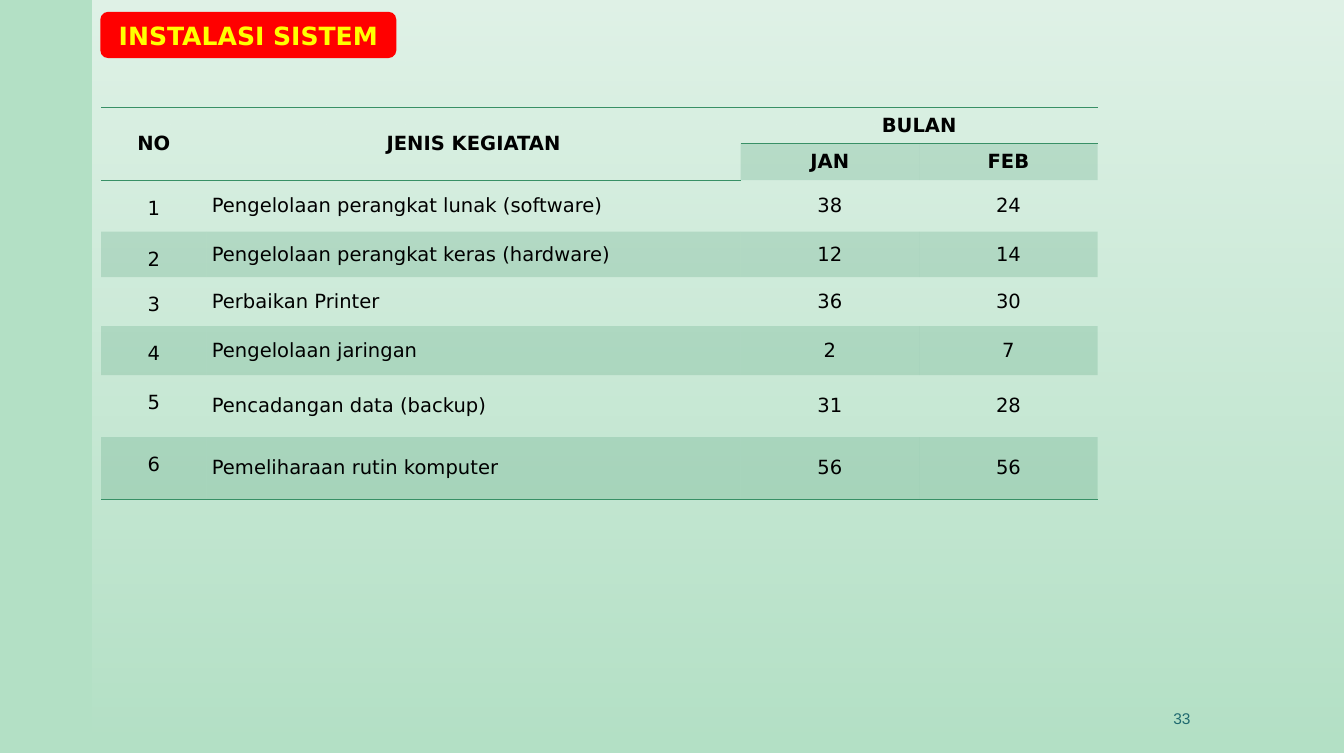
from lxml.etree import SubElement
from pptx import Presentation
from pptx.dml.color import RGBColor
from pptx.enum.shapes import MSO_SHAPE
from pptx.enum.text import MSO_ANCHOR, MSO_AUTO_SIZE, PP_ALIGN
from pptx.oxml import parse_xml
from pptx.oxml.ns import nsdecls, qn
from pptx.util import Cm, Pt

COLORS = {
    "background": "B3E0C5",
    "panel": "FFFFFF",
    "band": "389066",
    "badge": "FF0000",
    "badge_text": "FFFF00",
    "text": "000000",
    "number": "1F696F",
}
FONT = "DejaVu Sans"
NO_TABLE_STYLE = "{2D5ABB26-0587-4C30-8999-92F81FD0307C}"
BADGE_BOX = (Cm(2.54), Cm(0.3), Cm(7.49), Cm(1.17))
COLUMN_WIDTHS = [2.67, 13.51, 4.52, 4.52]
ROW_HEIGHTS = [0.92, 0.92, 1.3, 1.07, 1.24, 1.24, 1.57, 1.57]
HEADER = [
    ("NO", "JENIS KEGIATAN", "BULAN", ""),
    ("", "", "JAN", "FEB"),
]
ACTIVITIES = [
    ("Pengelolaan perangkat lunak (software)", 38, 24),
    ("Pengelolaan perangkat keras (hardware)", 12, 14),
    ("Perbaikan Printer", 36, 30),
    ("Pengelolaan jaringan", 2, 7),
    ("Pencadangan data (backup)", 31, 28),
    ("Pemeliharaan rutin komputer", 56, 56),
]


def color(name):
    return RGBColor.from_string(COLORS[name])


def set_alphas(element, percentages):
    for node, percentage in zip(element.iter(qn("a:srgbClr")), percentages):
        SubElement(node, qn("a:alpha")).set("val", str(percentage * 1000))


def format_text(text_frame, size, color_name, font=FONT, bold=False, align=PP_ALIGN.CENTER):
    for paragraph in text_frame.paragraphs:
        paragraph.alignment = align
        for run in paragraph.runs:
            run.font.name = font
            run.font.size = Pt(size)
            run.font.bold = bold
            run.font.color.rgb = color(color_name)


def add_plain_shape(slide, kind, box):
    shape = slide.shapes.add_shape(kind, *box)
    shape.shadow.inherit = False
    shape.line.fill.background()
    return shape


def add_panel(slide):
    panel = add_plain_shape(slide, MSO_SHAPE.RECTANGLE, (Cm(2.34), 0, Cm(31.67), Cm(19.05)))
    panel.fill.gradient()
    panel.fill.gradient_angle = 270
    for stop, position in zip(panel.fill.gradient_stops, (0, 1)):
        stop.color.rgb = color("panel")
        stop.position = position
    set_alphas(panel.element.spPr, (60, 0))


def add_page_number(slide, text):
    box = slide.shapes.add_textbox(Cm(22.46), Cm(17.66), Cm(7.92), Cm(1.02))
    text_frame = box.text_frame
    text_frame.word_wrap = True
    text_frame.vertical_anchor = MSO_ANCHOR.MIDDLE
    text_frame.text = text
    format_text(text_frame, 11.1, "number", font="Arial", align=PP_ALIGN.RIGHT)


def set_borders(cell, sides):
    properties = cell._tc.get_or_add_tcPr()
    for index, side in enumerate(sides):
        properties.insert(index, parse_xml(
            f'<a:ln{side} {nsdecls("a")} w="12700"><a:solidFill>'
            f'<a:srgbClr val="{COLORS["band"]}"/></a:solidFill></a:ln{side}>'
        ))


def fill_cell(cell, banded):
    if banded:
        cell.fill.solid()
        cell.fill.fore_color.rgb = color("band")
        set_alphas(cell._tc.tcPr, [20])
    else:
        cell.fill.background()


def format_cell(cell, text, row, column):
    is_header = row < len(HEADER)
    cell.margin_left = cell.margin_right = Cm(0.13)
    cell.margin_top = cell.margin_bottom = Cm(0.13)
    cell.vertical_anchor = MSO_ANCHOR.MIDDLE
    if text:
        cell.text_frame.text = text
    align = PP_ALIGN.LEFT if column == 1 and not is_header else PP_ALIGN.CENTER
    format_text(cell.text_frame, 14, "text", bold=is_header, align=align)
    if column == 0 and not is_header:
        cell.vertical_anchor = MSO_ANCHOR.TOP
        cell.text_frame.paragraphs[0].line_spacing = 1.5
    fill_cell(cell, row % 2 == 1 and not (is_header and column < 2))
    if row == 0:
        set_borders(cell, "TB")
    elif row == len(ROW_HEIGHTS) - 1 or (row == 1 and column < 2):
        set_borders(cell, "B")


def add_activity_table(slide):
    frame = slide.shapes.add_table(
        len(ROW_HEIGHTS), len(COLUMN_WIDTHS), Cm(2.56), Cm(2.72),
        Cm(sum(COLUMN_WIDTHS)), Cm(sum(ROW_HEIGHTS)),
    )
    table = frame.table
    table.first_row = table.horz_banding = False
    table._tbl.tblPr.find(qn("a:tableStyleId")).text = NO_TABLE_STYLE
    for column, width in zip(table.columns, COLUMN_WIDTHS):
        column.width = Cm(width)
    for row, height in zip(table.rows, ROW_HEIGHTS):
        row.height = Cm(height)
    for column in (0, 1):
        table.cell(0, column).merge(table.cell(1, column))
    table.cell(0, 2).merge(table.cell(0, 3))
    numbered = [(number, *activity) for number, activity in enumerate(ACTIVITIES, 1)]
    for row, values in enumerate(HEADER + numbered):
        for column, value in enumerate(values):
            format_cell(table.cell(row, column), str(value), row, column)


def add_badge(slide):
    badge = add_plain_shape(slide, MSO_SHAPE.ROUNDED_RECTANGLE, BADGE_BOX)
    badge.fill.solid()
    badge.fill.fore_color.rgb = color("badge")


def format_title(slide, text):
    title = slide.shapes.title
    title.left, title.top, title.width, title.height = BADGE_BOX
    text_frame = title.text_frame
    text_frame.text = text
    text_frame.word_wrap = True
    text_frame.auto_size = MSO_AUTO_SIZE.NONE
    text_frame.vertical_anchor = MSO_ANCHOR.MIDDLE
    format_text(text_frame, 18, "badge_text", bold=True)
    title.element.getparent().append(title.element)


def main():
    presentation = Presentation()
    presentation.slide_width = Cm(34.01)
    presentation.slide_height = Cm(19.05)
    slide = presentation.slides.add_slide(presentation.slide_layouts[5])
    slide.background.fill.solid()
    slide.background.fill.fore_color.rgb = color("background")
    add_panel(slide)
    add_page_number(slide, "33")
    add_activity_table(slide)
    add_badge(slide)
    format_title(slide, "INSTALASI SISTEM")
    presentation.save("out.pptx")


if __name__ == "__main__":
    main()
